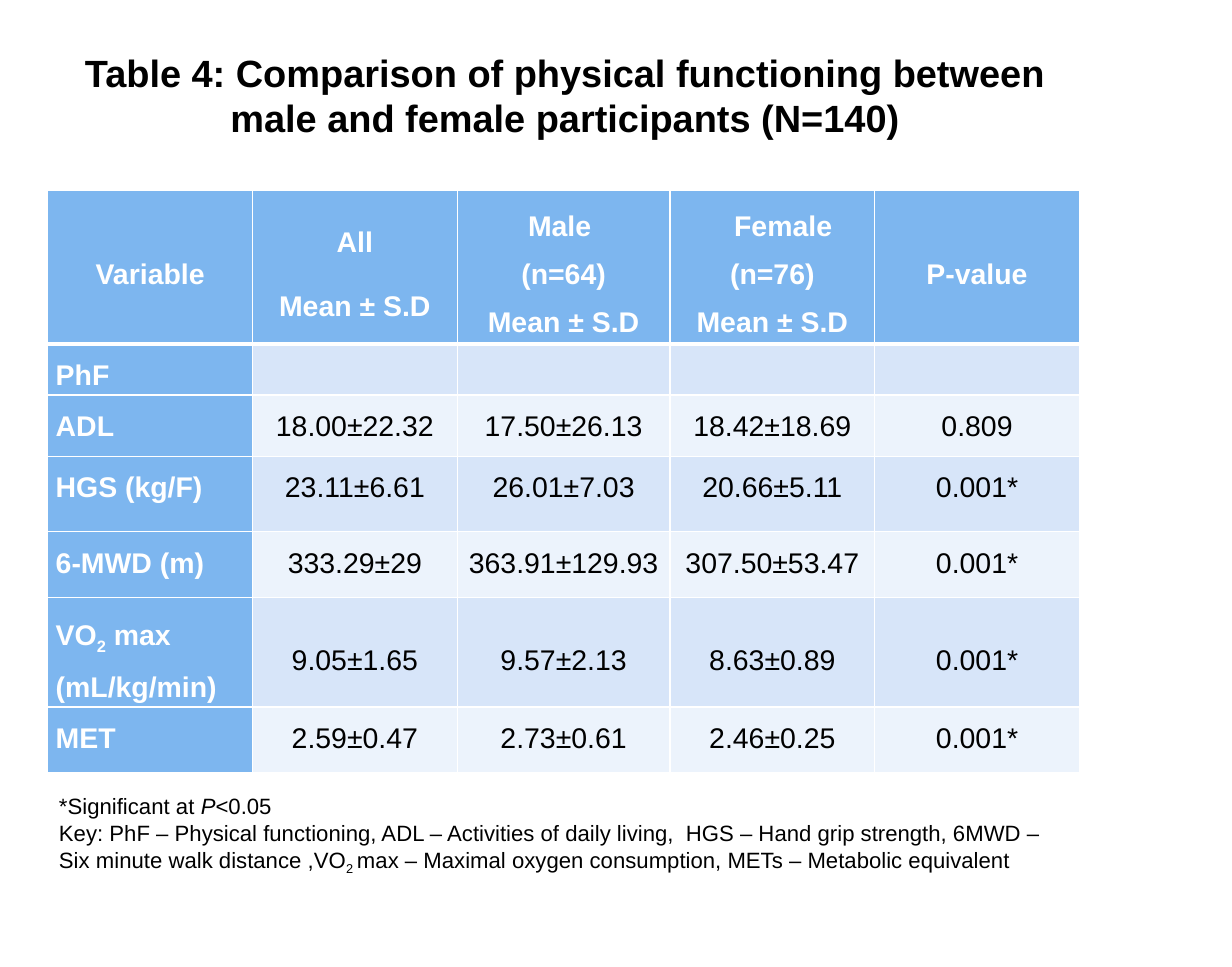
from dataclasses import dataclass
from typing import Any

import lxml.etree
import pptx
import pptx.dml.color
import pptx.enum.text
import pptx.oxml.ns
import pptx.util

WHITE = pptx.dml.color.RGBColor(0xFF, 0xFF, 0xFF)
BLACK = pptx.dml.color.RGBColor(0, 0, 0)
BLUE = pptx.dml.color.RGBColor(0x7D, 0xB6, 0xEF)
BANDS = (
    pptx.dml.color.RGBColor(0xD7, 0xE5, 0xF9),
    pptx.dml.color.RGBColor(0xEC, 0xF3, 0xFC),
)
FONT = "Arial"
WIDTH = pptx.util.Inches(10.83)
HEIGHT = pptx.util.Inches(8.5)
CENTER = pptx.enum.text.PP_ALIGN.CENTER
LEFT = pptx.enum.text.PP_ALIGN.LEFT
MIDDLE = pptx.enum.text.MSO_ANCHOR.MIDDLE
TOP = pptx.enum.text.MSO_ANCHOR.TOP
GAP = pptx.util.Pt(10)
CELL_MARGINS = {
    "margin_left": pptx.util.Inches(0.07),
    "margin_right": pptx.util.Inches(0.07),
    "margin_top": 0,
    "margin_bottom": 0,
}


@dataclass(frozen=True)
class Span:
    text: str
    italic: bool = False
    subscript: bool = False


@dataclass(frozen=True)
class Para:
    spans: tuple[Span, ...]
    gap_after: int = 0
    indent: float = 0


@dataclass(frozen=True)
class Frame:
    """Left, top, width and height in percent of the slide."""
    left: float
    top: float
    width: float
    height: float


@dataclass(frozen=True)
class Measure:
    """A table row: label, values, height in percent of the slide."""
    label: Para
    values: tuple[str, ...]
    height: float
    anchor: Any = TOP
    value_gap: int = 0


def line(text: str, gap_after: int = 0, indent: float = 0) -> Para:
    return Para((Span(text),), gap_after, indent)


TITLE_FRAME = Frame(5, 3.88, 81.72, 11.88)
TABLE_FRAME = Frame(3.88, 19.65, 83.75, 59.53)
NOTE_FRAME = Frame(3.88, 81.41, 83.84, 12.24)
COLUMN_WIDTHS = (16.62, 16.62, 17.27, 16.62, 16.62)
HEADER_HEIGHT = 15.76
MEAN = line("Mean ± S.D")
HEADERS = (
    (line("Variable"),),
    (line("All", GAP), MEAN),
    (line("Male "), line("(n=64)"), MEAN),
    (line("Female (n=76)", indent=0.19), MEAN),
    (line("P-value"),),
)
VO2_LABEL = Para((Span("VO"), Span("2", subscript=True), Span(" max (mL/kg/min)")))
MEASURES = (
    Measure(line("PhF", GAP), ("",) * 4, 5.06),
    Measure(line("ADL", GAP), ("18.00±22.32", "17.50±26.13", "18.42±18.69", "0.809"),
            6.35, value_gap=GAP),
    Measure(line("HGS (kg/F)"), ("23.11±6.61", "26.01±7.03", "20.66±5.11", "0.001*"),
            7.8, value_gap=GAP),
    Measure(line("6-MWD (m)"), ("333.29±29", "363.91±129.93", "307.50±53.47", "0.001*"),
            6.82),
    Measure(VO2_LABEL, ("9.05±1.65", "9.57±2.13", "8.63±0.89", "0.001*"), 10.82, MIDDLE),
    Measure(line("MET"), ("2.59±0.47", "2.73±0.61", "2.46±0.25", "0.001*"), 6.82),
)
TITLE = line("Table 4: Comparison of physical functioning between "
             "male and female participants (N=140)")
NOTES = (
    Para((Span("*Significant at "), Span("P", italic=True), Span("<0.05"))),
    Para((
        Span("Key: PhF – Physical functioning, ADL – Activities of daily living,  "
             "HGS – Hand grip strength, 6MWD – Six minute walk distance ,VO"),
        Span("2 ", subscript=True),
        Span("max – Maximal oxygen consumption, METs – Metabolic equivalent"),
    )),
)


def across(percent: float) -> int:
    return round(WIDTH * percent / 100)


def down(percent: float) -> int:
    return round(HEIGHT * percent / 100)


def place(frame: Frame) -> tuple[int, int, int, int]:
    return across(frame.left), down(frame.top), across(frame.width), down(frame.height)


def apply(target: Any, formats: dict[str, Any]) -> None:
    for name, value in formats.items():
        setattr(target, name, value)


def write(text_frame: Any, paras: tuple[Para, ...], size: float,
          color: pptx.dml.color.RGBColor, bold: bool = False,
          align: Any = LEFT, spacing: float = 1.0) -> None:
    for index, para in enumerate(paras):
        target = text_frame.add_paragraph() if index else text_frame.paragraphs[0]
        apply(target, {"alignment": align, "line_spacing": spacing,
                       "space_before": 0, "space_after": para.gap_after})
        if para.indent:
            target._p.get_or_add_pPr().set("indent", str(pptx.util.Inches(para.indent)))
        for span in para.spans:
            run = target.add_run()
            run.text = span.text
            apply(run.font, {"name": FONT, "size": pptx.util.Pt(size),
                             "bold": bold, "italic": span.italic})
            run.font.color.rgb = color
            if span.subscript:
                run._r.get_or_add_rPr().set("baseline", "-25000")


def add_text(page: Any, frame: Frame, paras: tuple[Para, ...], anchor: Any,
             **style: Any) -> None:
    box = page.shapes.add_textbox(*place(frame))
    apply(box.text_frame, {"word_wrap": True, "vertical_anchor": anchor})
    write(box.text_frame, paras, color=BLACK, **style)


def outline(cell: Any, top: float, bottom: float) -> None:
    """Draw white borders, with the top and bottom widths in points."""
    properties = cell._tc.get_or_add_tcPr()
    for side, width in {"L": 1, "R": 1, "T": top, "B": bottom}.items():
        border = lxml.etree.SubElement(properties, pptx.oxml.ns.qn(f"a:ln{side}"),
                                       w=str(pptx.util.Pt(width)))
        fill = lxml.etree.SubElement(border, pptx.oxml.ns.qn("a:solidFill"))
        lxml.etree.SubElement(fill, pptx.oxml.ns.qn("a:srgbClr"), val=str(WHITE))


def add_comparison(page: Any) -> None:
    table = page.shapes.add_table(len(MEASURES) + 1, len(COLUMN_WIDTHS),
                                  *place(TABLE_FRAME)).table
    apply(table, {"first_row": False, "horz_banding": False})
    for column, width in zip(table.columns, COLUMN_WIDTHS):
        column.width = across(width)
    heights = (HEADER_HEIGHT, *(measure.height for measure in MEASURES))
    for row, height in zip(table.rows, heights):
        row.height = down(height)

    def fill_cell(row: int, column: int, paras: tuple[Para, ...], anchor: Any) -> None:
        cell = table.cell(row, column)
        heading = row == 0 or column == 0
        outline(cell, top=3 if row == 1 else 1, bottom=3 if row == 0 else 1)
        cell.fill.solid()
        cell.fill.fore_color.rgb = BLUE if heading else BANDS[(row - 1) % 2]
        apply(cell, {**CELL_MARGINS, "vertical_anchor": anchor})
        write(cell.text_frame, paras, 18, WHITE if heading else BLACK, heading,
              CENTER if row == 0 or column else LEFT, 1.5)

    for column, paras in enumerate(HEADERS):
        fill_cell(0, column, paras, MIDDLE)
    for row, measure in enumerate(MEASURES, start=1):
        fill_cell(row, 0, (measure.label,), measure.anchor)
        for column, value in enumerate(measure.values, start=1):
            gap = measure.value_gap if column < len(measure.values) else 0
            fill_cell(row, column, (line(value, gap),), measure.anchor)


def main() -> None:
    deck = pptx.Presentation()
    apply(deck, {"slide_width": WIDTH, "slide_height": HEIGHT})
    page = deck.slides.add_slide(deck.slide_layouts[6])
    add_text(page, TITLE_FRAME, (TITLE,), MIDDLE, size=24, bold=True, align=CENTER)
    add_comparison(page)
    add_text(page, NOTE_FRAME, NOTES, TOP, size=14)
    deck.save("out.pptx")


if __name__ == "__main__":
    main()
